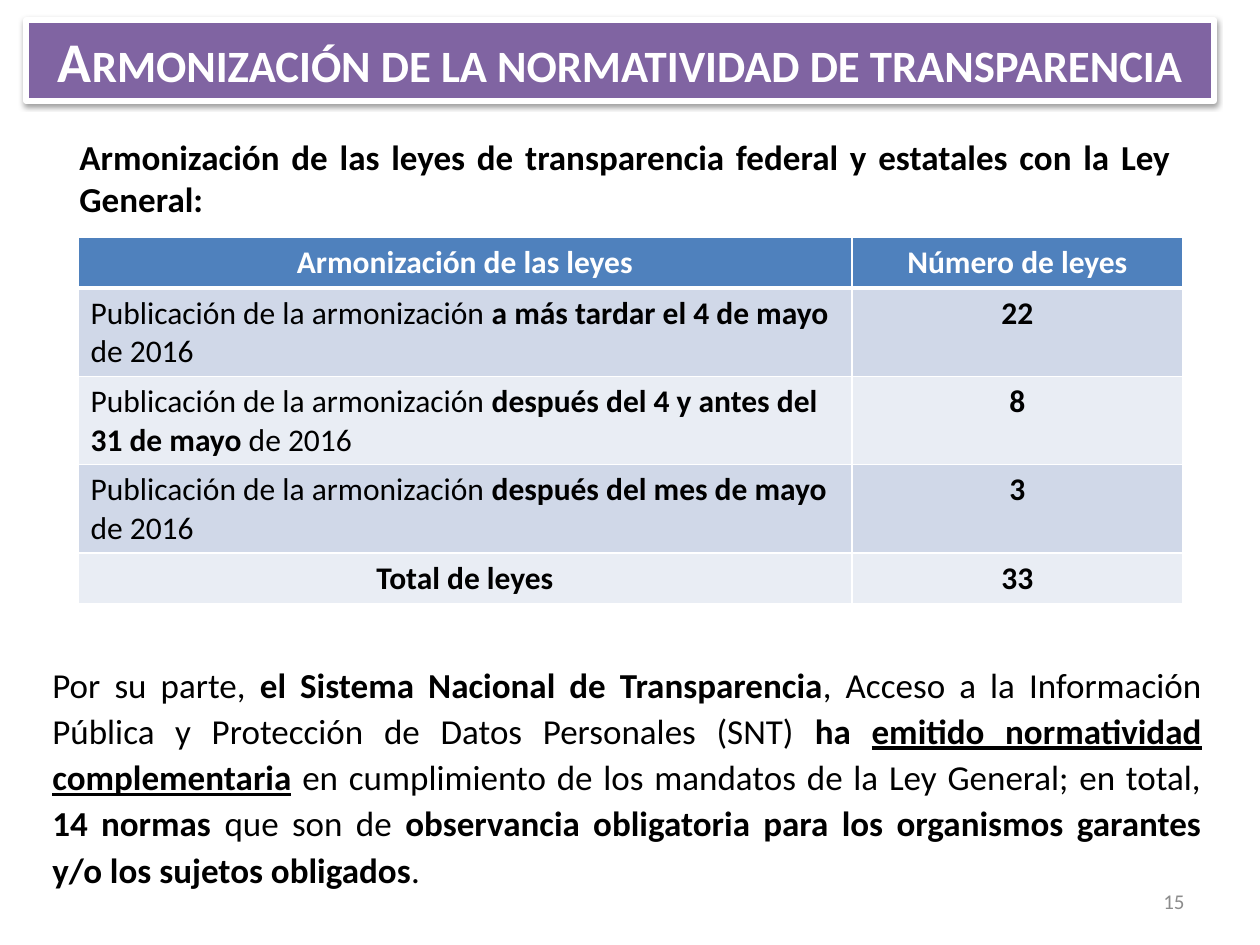
from dataclasses import dataclass

import pptx
import pptx.dml.color
import pptx.enum.text
import pptx.oxml
import pptx.oxml.ns
import pptx.util

RGBColor = pptx.dml.color.RGBColor
ALIGN = pptx.enum.text.PP_ALIGN
ANCHOR = pptx.enum.text.MSO_ANCHOR
AUTO_SIZE = pptx.enum.text.MSO_AUTO_SIZE

PX_PER_INCH = 126
FONT = "Calibri"
WHITE = RGBColor(0xFF, 0xFF, 0xFF)
BLACK = RGBColor(0x00, 0x00, 0x00)
GRAY = RGBColor(0x8C, 0x8C, 0x8C)
PURPLE = RGBColor(0x80, 0x64, 0xA2)
BLUE = RGBColor(0x4F, 0x81, 0xBD)
BAND_DARK = RGBColor(0xD0, 0xD8, 0xE8)
BAND_LIGHT = RGBColor(0xE9, 0xED, 0xF4)


@dataclass(frozen=True)
class Span:
    text: str
    bold: bool = False
    underline: bool = False


@dataclass(frozen=True)
class Box:
    left: int
    top: int
    width: int
    height: int


@dataclass(frozen=True)
class LawRow:
    label: list[Span]
    count: str
    height: int
    fill: RGBColor
    color: RGBColor = BLACK
    label_align: ALIGN = ALIGN.CENTER
    bottom_border: int = 1


PUBLISHED = Span("Publicación de la armonización ")
ROWS = [
    LawRow([Span("Armonización de las leyes", True)], "Número de leyes", 51, BLUE,
           color=WHITE, bottom_border=3),
    LawRow([PUBLISHED, Span("a más tardar el 4 de mayo ", True), Span("de 2016")],
           "22", 88, BAND_DARK, label_align=ALIGN.LEFT),
    LawRow([PUBLISHED, Span("después del 4 y antes del 31 de mayo", True), Span(" de 2016")],
           "8", 88, BAND_LIGHT, label_align=ALIGN.LEFT),
    LawRow([PUBLISHED, Span("después del mes de mayo", True), Span(" de 2016")],
           "3", 88, BAND_DARK, label_align=ALIGN.LEFT),
    LawRow([Span("Total de leyes", True)], "33", 51, BAND_LIGHT),
]
COLUMN_WIDTHS = [774, 331]

CLOSING = [
    Span("Por su parte, "),
    Span("el Sistema Nacional de Transparencia", True),
    Span(", Acceso a la Información Pública y Protección de Datos Personales (SNT) "),
    Span("ha ", True),
    Span("emitido normatividad complementaria", True, True),
    Span(" ", True),
    Span("en cumplimiento de los mandatos de la Ley General; en total, "),
    Span("14 normas ", True),
    Span("que son de "),
    Span("observancia obligatoria para los organismos garantes y/o los sujetos obligados", True),
    Span("."),
]


def px(n: int) -> pptx.util.Emu:
    return pptx.util.Emu(n * pptx.util.Inches(1) // PX_PER_INCH)


def write_spans(tf, spans: list[Span], size: int, color: RGBColor, align: ALIGN):
    p = tf.paragraphs[0]
    p.alignment = align
    for span in spans:
        r = p.add_run()
        r.text = span.text
        r.font.name = FONT
        r.font.size = pptx.util.Pt(size)
        r.font.color.rgb = color
        r.font.bold = span.bold
        r.font.underline = span.underline
    return p


def add_text(slide, box: Box, spans: list[Span], size: int, color: RGBColor, align: ALIGN):
    sp = slide.shapes.add_textbox(px(box.left), px(box.top), px(box.width), px(box.height))
    sp.text_frame.word_wrap = True
    write_spans(sp.text_frame, spans, size, color, align)
    return sp


def add_title(slide, box: Box, text: str) -> None:
    sp = slide.shapes.title
    sp.left, sp.top, sp.width, sp.height = (
        px(n) for n in (box.left, box.top, box.width, box.height))
    sp.fill.solid()
    sp.fill.fore_color.rgb = PURPLE
    sp.line.color.rgb = WHITE
    sp.line.width = pptx.util.Pt(3)
    sp.element.spPr.append(pptx.oxml.parse_xml(
        f'<a:effectLst {pptx.oxml.ns.nsdecls("a")}>'
        '<a:outerShdw blurRad="40000" dist="20000" dir="5400000" rotWithShape="0">'
        '<a:srgbClr val="000000"><a:alpha val="38000"/></a:srgbClr>'
        '</a:outerShdw></a:effectLst>'))
    tf = sp.text_frame
    tf.word_wrap = True
    tf.auto_size = AUTO_SIZE.NONE
    tf.vertical_anchor = ANCHOR.TOP
    p = write_spans(tf, [Span(text, True)], 32, WHITE, ALIGN.CENTER)
    p.runs[0].font._element.set("cap", "small")


def set_borders(cell, bottom: int) -> None:
    tc_pr = cell._tc.get_or_add_tcPr()
    for side, width in (("L", 1), ("R", 1), ("T", 1), ("B", bottom)):
        tc_pr.append(pptx.oxml.parse_xml(
            f'<a:ln{side} {pptx.oxml.ns.nsdecls("a")} w="{pptx.util.Pt(width)}">'
            f'<a:solidFill><a:srgbClr val="{WHITE}"/></a:solidFill></a:ln{side}>'))


def add_law_table(slide, left: int, top: int) -> None:
    table = slide.shapes.add_table(
        len(ROWS), len(COLUMN_WIDTHS), px(left), px(top),
        px(sum(COLUMN_WIDTHS)), px(sum(row.height for row in ROWS))).table
    for column, width in zip(table.columns, COLUMN_WIDTHS):
        column.width = px(width)
    for i, row in enumerate(ROWS):
        table.rows[i].height = px(row.height)
        contents = [(row.label, row.label_align), ([Span(row.count, True)], ALIGN.CENTER)]
        for j, (spans, align) in enumerate(contents):
            cell = table.cell(i, j)
            # The top edge of the first body row is the header's thick bottom edge.
            set_borders(cell, row.bottom_border)
            cell.fill.solid()
            cell.fill.fore_color.rgb = row.fill
            write_spans(cell.text_frame, spans, 18, row.color, align)


def main() -> None:
    prs = pptx.Presentation()
    prs.slide_width = px(1260)
    prs.slide_height = px(945)
    slide = prs.slides.add_slide(prs.slide_layouts.get_by_name("Title Only"))

    add_title(slide, Box(26, 20, 1188, 81), "Armonización de la normatividad de transparencia")
    number = add_text(slide, Box(903, 876, 294, 50), [Span("15")], 12, GRAY, ALIGN.RIGHT)
    number.text_frame.vertical_anchor = ANCHOR.MIDDLE
    add_text(slide, Box(67, 129, 1116, 97),
             [Span("Armonización de las leyes de transparencia federal y estatales "
                   "con la Ley General:", True)], 20, BLACK, ALIGN.JUSTIFY)
    add_law_table(slide, 78, 237)
    closing = add_text(slide, Box(40, 653, 1174, 243), CLOSING, 20, BLACK, ALIGN.JUSTIFY)
    closing.text_frame.paragraphs[0].line_spacing = 1.1

    prs.save("out.pptx")


if __name__ == "__main__":
    main()
